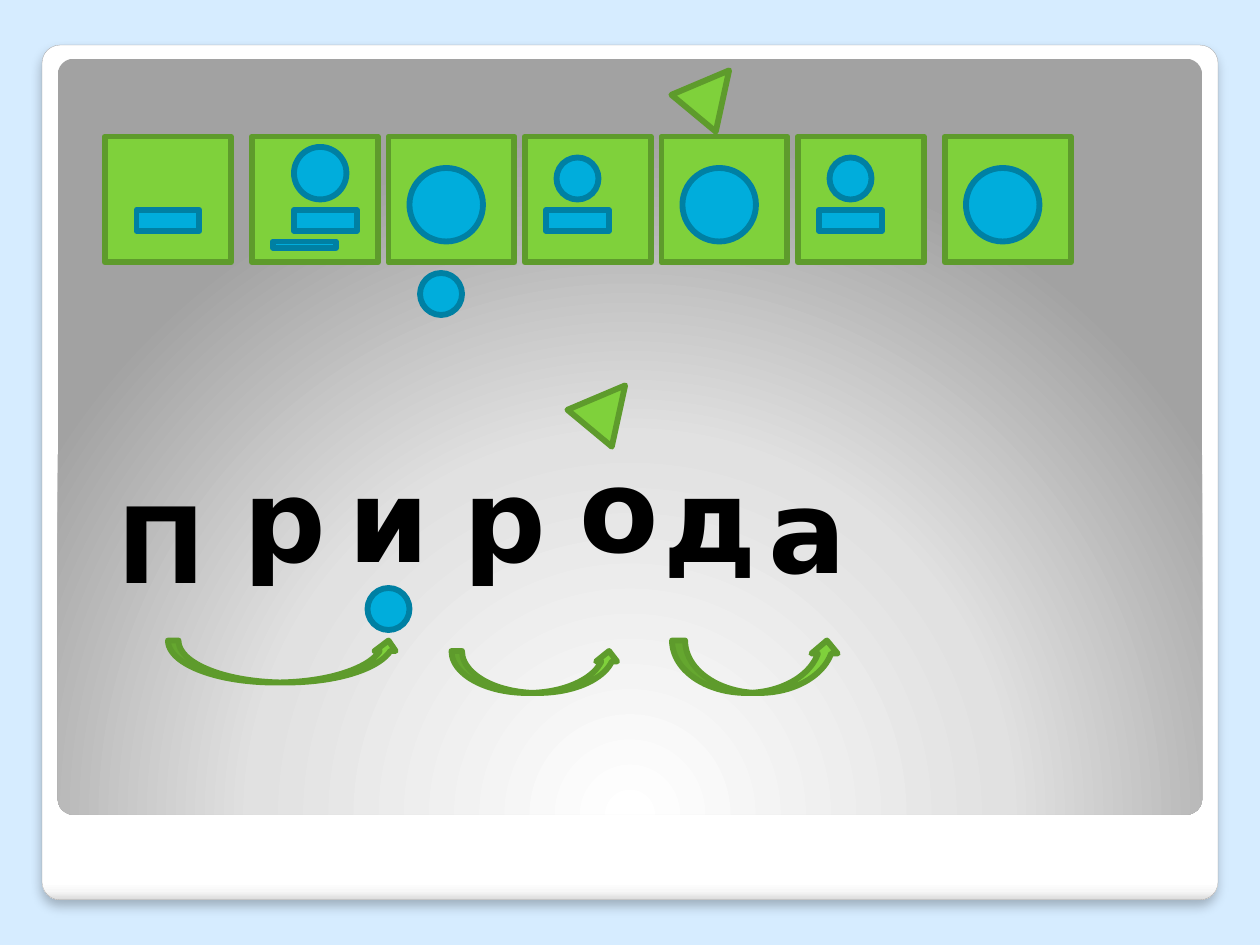
"""Sound scheme and syllable arcs for a spelled-out word."""
from dataclasses import dataclass

from lxml import etree
from pptx import Presentation
from pptx.dml.color import RGBColor
from pptx.enum.shapes import MSO_SHAPE
from pptx.enum.text import MSO_AUTO_SIZE
from pptx.oxml import parse_xml
from pptx.oxml.ns import nsdecls
from pptx.util import Inches, Pt

RECTANGLE = MSO_SHAPE.RECTANGLE
ROUNDED = MSO_SHAPE.ROUNDED_RECTANGLE
OVAL = MSO_SHAPE.OVAL
TRIANGLE = MSO_SHAPE.ISOSCELES_TRIANGLE
ARC = MSO_SHAPE.CURVED_UP_ARROW
FIT_SHAPE = MSO_AUTO_SIZE.SHAPE_TO_FIT_TEXT

CELLS_PER_INCH = 12
GREEN = ("7FD13B", "5E9B2C")
BLUE = ("00ADDC", "0080A3")
CARD_ROW = 13
CARD_SIZE = 12


@dataclass(frozen=True)
class Box:
    """Place and size in columns and rows of the slide grid."""
    column: float
    row: float
    width: float
    height: float

    def lengths(self):
        """Return left, top, width and height as slide lengths."""
        cells = (self.column, self.row, self.width, self.height)
        return [Inches(cell / CELLS_PER_INCH) for cell in cells]


@dataclass(frozen=True)
class Mark:
    """A blue sign on a sound card, offset from the card's corner."""
    kind: int
    column: float
    row: float
    width: float
    height: float


@dataclass(frozen=True)
class Card:
    """A green sound card with its signs."""
    column: float
    marks: tuple[Mark, ...]


@dataclass(frozen=True)
class Letter:
    """A letter of the word with its text box."""
    text: str
    box: Box
    size: int = 66


def bar(column: float) -> Mark:
    """Return the bar sign of a consonant."""
    return Mark(RECTANGLE, column, 7, 6, 2)


def circle(column: float, row: float, size: float) -> Mark:
    """Return a round sign."""
    return Mark(OVAL, column, row, size, size)


VOWEL = (circle(2, 3, 7),)
SYLLABLE = (bar(2), circle(3, 2, 4))
CARDS = (
    Card(10, (bar(3),)),
    Card(24, (bar(4), Mark(RECTANGLE, 2, 10, 6, 0.6), circle(4, 1, 5))),
    Card(37, VOWEL),
    Card(50, SYLLABLE),
    Card(63, VOWEL),
    Card(76, SYLLABLE),
    Card(90, VOWEL),
)
LETTERS = (
    Letter("П", Box(10, 45, 11, 13.3), 60),
    Letter("р", Box(22, 42, 15, 14.5)),
    Letter("и", Box(32, 42, 24, 14.5)),
    Letter("р", Box(43, 42, 22, 14.5)),
    Letter("о", Box(54, 41, 26, 14.5)),
    Letter("д", Box(62, 42, 22, 14.5)),
    Letter("а", Box(72, 43, 32, 14.5)),
)
STRESSES = (Box(65, 6.1, 5.5, 5.3), Box(55.1, 36.1, 5.5, 5.3))
DOTS = (Box(40, 26, 4, 4), Box(35, 56, 4, 4))
ARCS = (Box(16, 61, 22, 4), Box(43, 62, 16, 4), Box(64, 61, 16, 5))


def color(value: str) -> RGBColor:
    """Turn a hex string into a colour."""
    return RGBColor.from_string(value)


def add_figure(slide, kind: int, box: Box, colors: tuple[str, str],
               rotation: float = 0):
    """Draw a filled and outlined shape."""
    shape = slide.shapes.add_shape(kind, *box.lengths())
    shape.shadow.inherit = False
    shape.rotation = rotation
    shape.fill.solid()
    shape.fill.fore_color.rgb = color(colors[0])
    shape.line.color.rgb = color(colors[1])
    shape.line.width = Pt(3.35)
    return shape


def add_panel(slide, box: Box, stops: tuple, direction: str):
    """Draw a rounded panel with a gradient fill and no line."""
    shape = slide.shapes.add_shape(ROUNDED, *box.lengths())
    shape.adjustments[0] = 0.021
    shape.shadow.inherit = False
    shape.line.fill.background()
    shape.fill.gradient()
    stop_list = "".join(
        f'<a:gs pos="{share * 1000}"><a:srgbClr val="{value}"/></a:gs>'
        for share, value in stops)
    gradient = parse_xml(f'<a:gradFill {nsdecls("a")} rotWithShape="1">'
                         f'<a:gsLst>{stop_list}</a:gsLst>{direction}</a:gradFill>')
    properties = shape._element.spPr
    properties.replace(properties.find(gradient.tag), gradient)
    return shape


def add_shadow(shape) -> None:
    """Give a shape a soft shadow below it."""
    effects = shape._element.spPr.find("{*}effectLst")
    namespace = etree.QName(effects).namespace
    shadow = etree.SubElement(effects, f"{{{namespace}}}outerShdw", blurRad=str(Pt(6)),
                              dist=str(Pt(4)), dir="5400000", algn="t", rotWithShape="0")
    shade = etree.SubElement(shadow, f"{{{namespace}}}srgbClr", val="000000")
    etree.SubElement(shade, f"{{{namespace}}}alpha", val="25000")


def add_text(slide, text: str, box: Box, *, size: int, font: str = "DejaVu Sans",
             value: str = "000000", bold: bool = True) -> None:
    """Write a text in a wrapping box."""
    frame = slide.shapes.add_textbox(*box.lengths()).text_frame
    frame.word_wrap = True
    frame.auto_size = FIT_SHAPE
    run = frame.paragraphs[0].add_run()
    run.text = text
    run.font.name = font
    run.font.size = Pt(size)
    run.font.bold = bold
    run.font.color.rgb = color(value)


def add_card(slide, card: Card) -> None:
    """Draw a sound card and its signs."""
    add_figure(slide, RECTANGLE, Box(card.column, CARD_ROW, CARD_SIZE, CARD_SIZE), GREEN)
    for mark in card.marks:
        box = Box(card.column + mark.column, CARD_ROW + mark.row, mark.width, mark.height)
        add_figure(slide, mark.kind, box, BLUE)


def main() -> None:
    """Build and save the slide."""
    presentation = Presentation()
    presentation.slide_width = Inches(10)
    presentation.slide_height = Inches(7.5)
    slide = presentation.slides.add_slide(presentation.slide_layouts[6])
    slide.background.fill.solid()
    slide.background.fill.fore_color.rgb = color("D6ECFF")

    frame = add_panel(slide, Box(4, 4.3, 112, 81.4),
                      ((0, "FFFFFF"), (98, "FFFFFF"), (99, "F7F7F7"), (100, "DADADA")),
                      '<a:lin ang="5400000" scaled="0"/>')
    frame.line.color.rgb = color("A4A4A4")
    frame.line.width = Pt(0.16)
    add_shadow(frame)
    add_panel(slide, Box(5.5, 5.6, 109, 72),
              ((0, "FFFFFF"), (55, "E1E1E1"), (100, "A2A2A2")),
              '<a:path path="circle"><a:fillToRect l="50000" t="175000" '
              'r="50000" b="-75000"/></a:path>')

    for card in CARDS:
        add_card(slide, card)
    for letter in LETTERS:
        add_text(slide, letter.text, letter.box, size=letter.size)
    for box in STRESSES:
        add_figure(slide, TRIANGLE, box, GREEN, rotation=39.7)
    for box in DOTS:
        add_figure(slide, OVAL, box, BLUE)
    for box in ARCS:
        add_figure(slide, ARC, box, GREEN)
    presentation.save("out.pptx")


if __name__ == "__main__":
    main()
